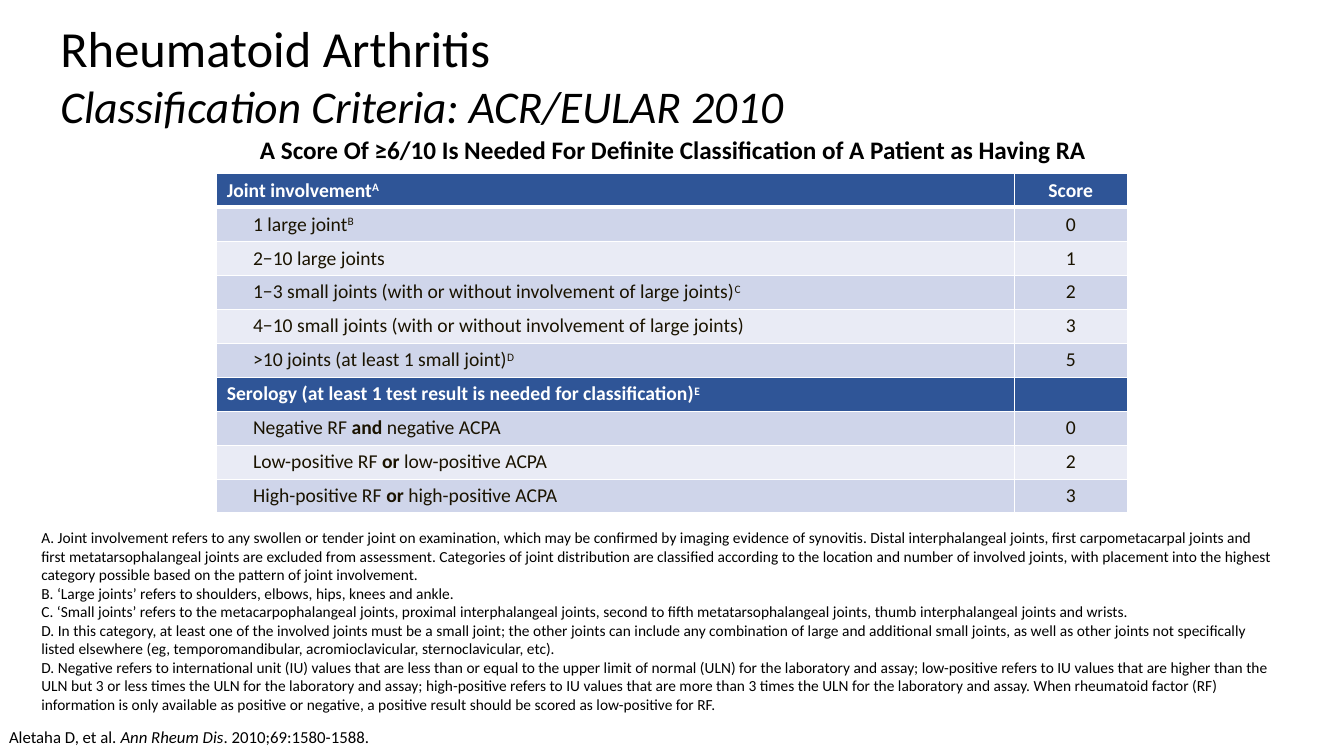
from lxml.etree import SubElement
from pptx import Presentation
from pptx.dml.color import RGBColor
from pptx.enum.text import MSO_ANCHOR, PP_ALIGN
from pptx.oxml.ns import qn
from pptx.util import Inches, Pt

NAVY, BLUE, PALE = "2F5597", "CFD5EA", "E9EBF5"
WHITE, BLACK, INK = "FFFFFF", "000000", "1A1300"


def add_runs(para, runs, size, color, bold=False):
    """Add (text, style) runs; style holds b for bold, i for italic, ^ for superscript."""
    for text, style in runs:
        run = para.add_run()
        run.text = text
        font = run.font
        font.name, font.size = "Calibri", Pt(size)
        font.color.rgb = RGBColor.from_string(color)
        font.bold = bold or "b" in style
        font.italic = "i" in style
        if "^" in style:
            font._element.set("baseline", "30000")


def add_text(box, paras, anchor, inset=0.03, align=PP_ALIGN.LEFT):
    """Add a text box; each paragraph is (size, runs)."""
    frame = slide.shapes.add_textbox(*map(Inches, box)).text_frame
    frame.word_wrap = True
    frame.vertical_anchor = anchor
    frame.margin_left = frame.margin_right = Inches(max(inset, 0.03))
    frame.margin_top = frame.margin_bottom = Inches(inset / 2 if inset > 0.05 else inset)
    for n, (size, runs) in enumerate(paras):
        para = frame.add_paragraph() if n else frame.paragraphs[0]
        para.alignment = align
        add_runs(para, runs, size, BLACK)


deck = Presentation()
deck.slide_width, deck.slide_height = Inches(13.33), Inches(7.5)
slide = deck.slides.add_slide(deck.slide_layouts[6])

# Criteria table: (label runs, score, is heading)
rows = [
    ([("Joint involvement", ""), ("A", "^")], "Score", True),
    ([("1 large joint", ""), ("B", "^")], "0", False),
    ([("2−10 large joints", "")], "1", False),
    ([("1−3 small joints (with or without involvement of large joints)", ""), ("C", "^")], "2", False),
    ([("4−10 small joints (with or without involvement of large joints)", "")], "3", False),
    ([(">10 joints (at least 1 small joint)", ""), ("D", "^")], "5", False),
    ([("Serology (at least 1 test result is needed for classification)", ""), ("E", "^")], "", True),
    ([("Negative RF ", ""), ("and", "b"), (" negative ACPA", "")], "0", False),
    ([("Low-positive RF ", ""), ("or", "b"), (" low-positive ACPA", "")], "2", False),
    ([("High-positive RF ", ""), ("or", "b"), (" high-positive ACPA", "")], "3", False),
]
table = slide.shapes.add_table(
    len(rows), 2, Inches(2.15), Inches(1.72), Inches(9.03), Inches(3.3)).table
table.columns[0].width, table.columns[1].width = Inches(7.91), Inches(1.12)

band = 0
for r, (label, score, head) in enumerate(rows):
    band = 0 if head else band + 1
    fill = NAVY if head else BLUE if band % 2 else PALE
    for c, runs in enumerate([label, [(score, "")] if score else []]):
        cell = table.cell(r, c)
        para = cell.text_frame.paragraphs[0]
        if c:
            para.alignment = PP_ALIGN.CENTER
        elif not head:
            para._p.get_or_add_pPr().set("marL", str(Inches(0.26)))
        add_runs(para, runs, 14, WHITE if head else INK, head)
        if not runs:
            SubElement(para._p, qn("a:endParaRPr"), sz="1400")
        props = cell._tc.get_or_add_tcPr()
        for side in "LRTB":
            thick = (r == 0 and side == "B") or (r == 1 and side == "T")
            line = SubElement(props, qn(f"a:ln{side}"), w=str(Pt(3 if thick else 1)))
            SubElement(SubElement(line, qn("a:solidFill")), qn("a:srgbClr"), val=WHITE)
        cell.fill.solid()
        cell.fill.fore_color.rgb = RGBColor.from_string(fill)

# Title, source, footnotes and table heading
add_text((0.5, 0.2, 11.69, 1.08), [
    (36.1, [("Rheumatoid Arthritis", "")]),
    (32.4, [("Classification Criteria: ACR/EULAR 2010", "i")]),
], MSO_ANCHOR.MIDDLE, 0.1)

add_text((0.06, 7.18, 5.67, 0.26), [(12, [
    ("Aletaha D, et al. ", ""), ("Ann Rheum Dis", "i"), (". 2010;69:1580-1588.", ""),
])], MSO_ANCHOR.BOTTOM)

notes = [
    "A. Joint involvement refers to any swollen or tender joint on examination, which may be "
    "confirmed by imaging evidence of synovitis. Distal interphalangeal joints, first "
    "carpometacarpal joints and first metatarsophalangeal joints are excluded from assessment. "
    "Categories of joint distribution are classified according to the location and number of "
    "involved joints, with placement into the highest category possible based on the pattern of "
    "joint involvement.",
    "B. ‘Large joints’ refers to shoulders, elbows, hips, knees and ankle.",
    "C. ‘Small joints’ refers to the metacarpophalangeal joints, proximal interphalangeal joints, "
    "second to fifth metatarsophalangeal joints, thumb interphalangeal joints and wrists.",
    "D. In this category, at least one of the involved joints must be a small joint; the other "
    "joints can include any combination of large and additional small joints, as well as other "
    "joints not specifically listed elsewhere (eg, temporomandibular, acromioclavicular, "
    "sternoclavicular, etc).",
    "D. Negative refers to international unit (IU) values that are less than or equal to the upper "
    "limit of normal (ULN) for the laboratory and assay; low-positive refers to IU values that are "
    "higher than the ULN but 3 or less times the ULN for the laboratory and assay; high-positive "
    "refers to IU values that are more than 3 times the ULN for the laboratory and assay. When "
    "rheumatoid factor (RF) information is only available as positive or negative, a positive "
    "result should be scored as low-positive for RF.",
]
add_text((0.38, 5.21, 12.29, 1.91), [(11, [(note, "")]) for note in notes], MSO_ANCHOR.TOP)

add_text((1.77, 1.3, 9.81, 0.36), [(18, [
    ("A Score Of ≥6/10 Is Needed For Definite Classification of A Patient as Having RA", "b"),
])], MSO_ANCHOR.BOTTOM, align=PP_ALIGN.CENTER)

deck.save("out.pptx")
